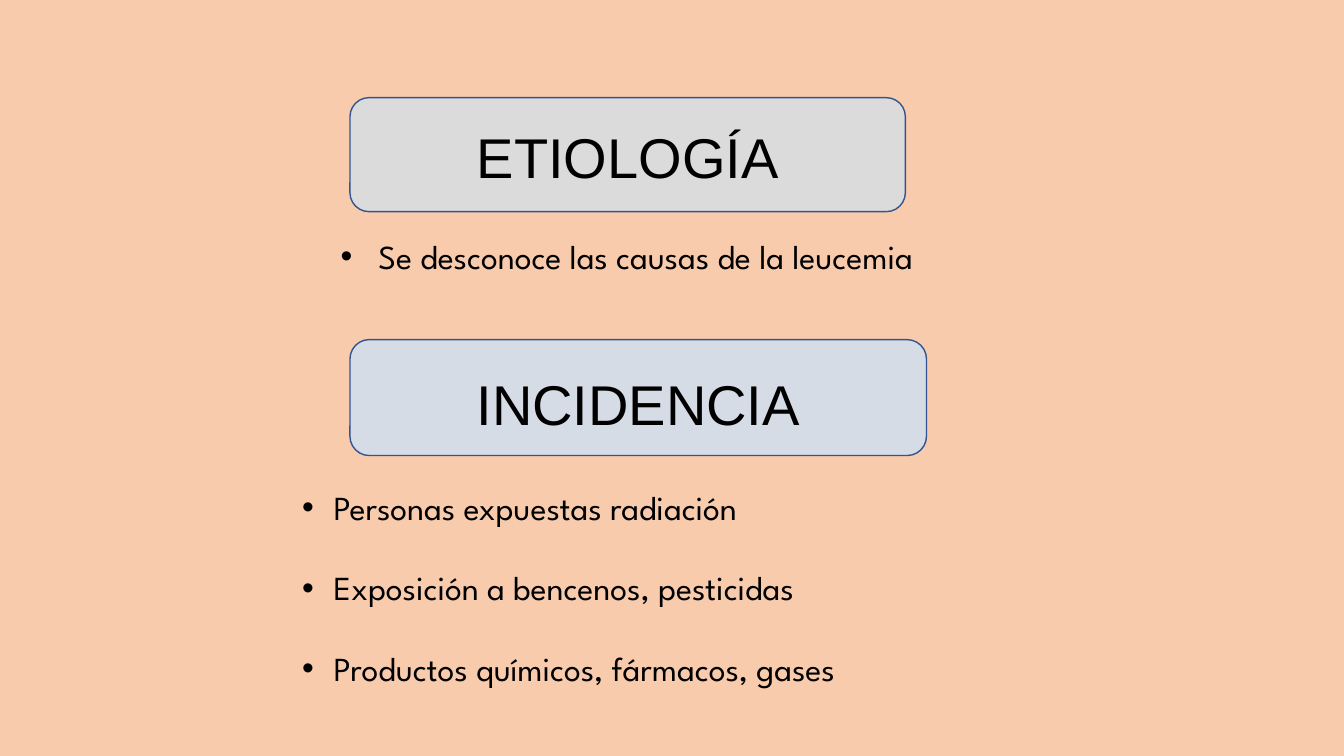
from dataclasses import dataclass

from lxml import etree
from pptx import Presentation
from pptx.dml.color import RGBColor
from pptx.enum.shapes import MSO_SHAPE
from pptx.enum.text import MSO_ANCHOR, PP_ALIGN
from pptx.oxml.ns import qn
from pptx.slide import Slide
from pptx.util import Pt

ROUNDED = MSO_SHAPE.ROUNDED_RECTANGLE
MIDDLE = MSO_ANCHOR.MIDDLE
CENTER = PP_ALIGN.CENTER


@dataclass(frozen=True)
class Theme:
    background: RGBColor = RGBColor(0xF8, 0xCB, 0xAD)
    etiology: RGBColor = RGBColor(0xDB, 0xDB, 0xDB)
    incidence: RGBColor = RGBColor(0xD6, 0xDC, 0xE5)
    outline: RGBColor = RGBColor(0x32, 0x54, 0x91)
    ink: RGBColor = RGBColor(0, 0, 0)
    heading_font: str = "Arial"
    body_font: str = "League Spartan"
    heading_size: float = 40
    body_size: float = 24
    outline_width: float = 1


@dataclass(frozen=True)
class Heading:
    title: str
    top: float
    width: float
    height: float
    fill: RGBColor
    drop: float


@dataclass(frozen=True)
class Points:
    lines: tuple[str, ...]
    left: float
    top: float
    width: float
    height: float
    indent: float


THEME = Theme()
HEADING_LEFT = 250
POINT_GAP = 28.7

HEADINGS = (
    Heading("ETIOLOGÍA", 69.8, 396.7, 81.4, THEME.etiology, 1.4),
    Heading("INCIDENCIA", 242.6, 411.8, 82.8, THEME.incidence, 7.2),
)
POINTS = (
    Points(("Se desconoce las causas de la leucemia",), 236.2, 164.9, 488.9, 152.6, 27),
    Points(
        (
            "Personas expuestas radiación",
            "Exposición a bencenos, pesticidas",
            "Productos químicos, fármacos, gases",
        ),
        208.8, 344.2, 529.9, 174.2, 22.5,
    ),
)


def draw_heading(slide: Slide, heading: Heading) -> None:
    """Draw a rounded panel with its centred title."""
    panel = slide.shapes.add_shape(
        ROUNDED, Pt(HEADING_LEFT), Pt(heading.top), Pt(heading.width), Pt(heading.height)
    )
    panel.shadow.inherit = False
    panel.fill.solid()
    panel.fill.fore_color.rgb = heading.fill
    panel.line.color.rgb = THEME.outline
    panel.line.width = Pt(THEME.outline_width)
    frame = panel.text_frame
    frame.vertical_anchor = MIDDLE
    frame.margin_top = Pt(3.6 + heading.drop)
    title = frame.paragraphs[0]
    title.text = heading.title
    title.alignment = CENTER
    title.font.name = THEME.heading_font
    title.font.size = Pt(THEME.heading_size)
    title.font.color.rgb = THEME.ink


def draw_points(slide: Slide, points: Points) -> None:
    """Draw a bulleted list with hanging indents."""
    frame = slide.shapes.add_textbox(
        Pt(points.left), Pt(points.top), Pt(points.width), Pt(points.height)
    ).text_frame
    frame.word_wrap = True
    frame.text = "\n".join(points.lines)
    for point in frame.paragraphs:
        point.space_after = Pt(POINT_GAP)
        point.font.name = THEME.body_font
        point.font.size = Pt(THEME.body_size)
        point.font.color.rgb = THEME.ink
        properties = point._p.get_or_add_pPr()
        properties.set("marL", str(Pt(points.indent)))
        properties.set("indent", str(-Pt(points.indent)))
        bullet_font = etree.Element(qn("a:buFont"), typeface="Arial")
        bullet = etree.Element(qn("a:buChar"), char="•")
        properties.find(qn("a:defRPr")).addprevious(bullet_font)
        bullet_font.addnext(bullet)


def main() -> None:
    """Build and save the slide."""
    deck = Presentation()
    deck.slide_width, deck.slide_height = Pt(960), Pt(540)
    slide = deck.slides.add_slide(deck.slide_layouts[6])
    slide.background.fill.solid()
    slide.background.fill.fore_color.rgb = THEME.background
    for heading in HEADINGS:
        draw_heading(slide, heading)
    for points in POINTS:
        draw_points(slide, points)
    deck.save("out.pptx")


if __name__ == "__main__":
    main()
